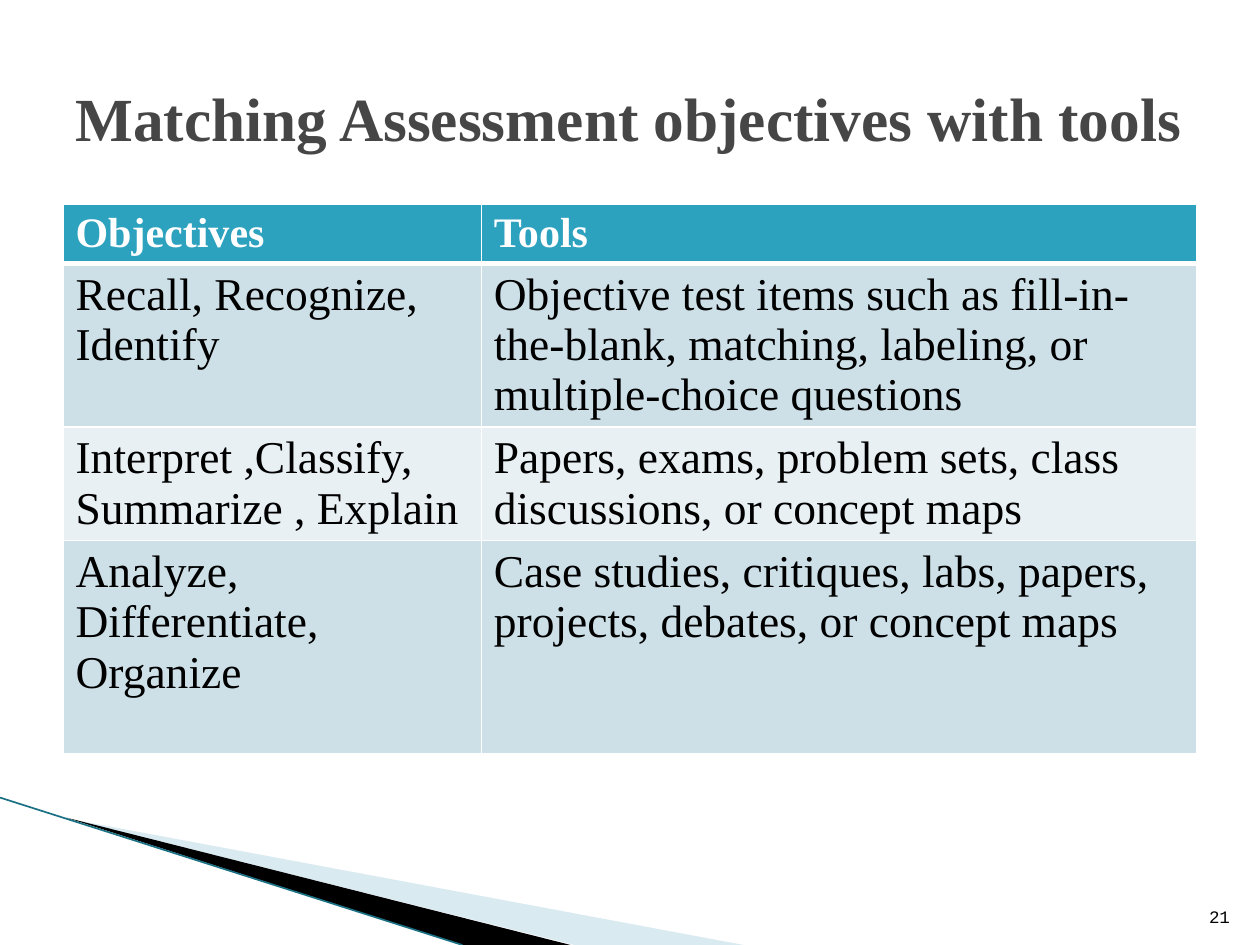
from lxml import etree
from pptx import Presentation
from pptx.dml.color import RGBColor
from pptx.enum.shapes import MSO_CONNECTOR
from pptx.enum.text import MSO_ANCHOR, PP_ALIGN
from pptx.oxml.ns import qn
from pptx.util import Inches, Pt

COLORS = {
    "title": "464646", "text": "000000", "white": "FFFFFF", "header": "2DA2BF",
    "band_dark": "CDE0E8", "band_light": "E8F0F4",
    "wedge_pale": "A0CBDC", "wedge_black": "000000", "edge": "1B7084",
}
SERIF = "Times New Roman"
TITLE = {"name": SERIF, "size": Pt(35), "bold": True}
HEADER = {"name": SERIF, "size": Pt(24), "bold": True}
BODY = {"name": SERIF, "size": Pt(26), "bold": False}
NUMBER = {"name": "Courier New", "size": Pt(10), "bold": False}

ROWS = [
    ("Objectives", "Tools"),
    ("Recall, Recognize, Identify",
     "Objective test items such as fill-in-the-blank, matching, labeling, "
     "or multiple-choice questions"),
    ("Interpret ,Classify, Summarize , Explain",
     "Papers, exams, problem sets, class discussions, or concept maps"),
    ("Analyze, Differentiate, Organize",
     "Case studies, critiques, labs, papers, projects, debates, or concept maps"),
]
COL_WIDTHS = [3.32, 5.68]
ROW_HEIGHTS = [0.46, 1.3, 0.9, 1.69]


def rgb(name):
    return RGBColor.from_string(COLORS[name])


def write(tf, text, font, color, align=PP_ALIGN.LEFT):
    p = tf.paragraphs[0]
    p.alignment = align
    r = p.add_run()
    r.text = text
    for key, value in font.items():
        setattr(r.font, key, value)
    r.font.color.rgb = rgb(color)


def add_text(s, box, text, font, color, anchor, align=PP_ALIGN.LEFT):
    tf = s.shapes.add_textbox(*map(Inches, box)).text_frame
    tf.word_wrap = True
    tf.vertical_anchor = anchor
    write(tf, text, font, color, align)


def set_borders(cell, widths):
    """Draw white borders; widths maps L, R, T, B to points."""
    tc_pr = cell._tc.get_or_add_tcPr()
    for i, side in enumerate("LRTB"):
        ln = etree.Element(qn(f"a:ln{side}"), w=str(Pt(widths.get(side, 1))))
        fill = etree.SubElement(ln, qn("a:solidFill"))
        etree.SubElement(fill, qn("a:srgbClr"), val=COLORS["white"])
        tc_pr.insert(i, ln)


def add_objectives_table(s, left, top):
    size = sum(COL_WIDTHS), sum(ROW_HEIGHTS)
    table = s.shapes.add_table(len(ROWS), len(COL_WIDTHS),
                               *map(Inches, (left, top, *size))).table
    for column, width in zip(table.columns, COL_WIDTHS):
        column.width = Inches(width)
    for i, (row, height, texts) in enumerate(zip(table.rows, ROW_HEIGHTS, ROWS)):
        row.height = Inches(height)
        band = "header" if i == 0 else ("band_light", "band_dark")[i % 2]
        font, color = (HEADER, "white") if i == 0 else (BODY, "text")
        for cell, text in zip(row.cells, texts):
            cell.fill.solid()
            cell.fill.fore_color.rgb = rgb(band)
            set_borders(cell, {0: {"B": 3}, 1: {"T": 3}}.get(i, {}))
            write(cell.text_frame, text, font, color)


def add_wedge(s, left, top, points, color, alpha=None):
    """Draw a filled outline whose points are relative to left, top."""
    corners = [(Inches(left + x), Inches(top + y)) for x, y in points]
    builder = s.shapes.build_freeform(*corners[0])
    builder.add_line_segments(corners[1:], close=True)
    sp = builder.convert_to_shape()
    sp.shadow.inherit = False
    sp.line.fill.background()
    sp.fill.solid()
    sp.fill.fore_color.rgb = rgb(color)
    if alpha:
        clr = sp._element.spPr.find(f".//{qn('a:srgbClr')}")
        etree.SubElement(clr, qn("a:alpha"), val=str(alpha * 1000))


def add_corner_decoration(s, left, top, width, height):
    add_wedge(s, left, top, [(0.55, 0.17), (width, height), (4.56, height)],
              "wedge_pale", alpha=40)
    add_wedge(s, left, top, [(0.53, 0.16), (4.53, height), (3.67, height)],
              "wedge_black")
    edge = s.shapes.add_connector(
        MSO_CONNECTOR.STRAIGHT, Inches(left), Inches(top),
        Inches(left + 3.67), Inches(top + height))
    edge.line.color.rgb = rgb("edge")
    edge.line.width = Pt(0.95)
    etree.SubElement(edge._element.spPr, qn("a:effectLst"))


def main():
    prs = Presentation()
    prs.slide_width, prs.slide_height = Inches(10), Inches(7.5)
    s = prs.slides.add_slide(prs.slide_layouts[6])
    add_corner_decoration(s, 0, 6.33, 5.9, 1.17)
    add_objectives_table(s, 0.5, 1.62)
    add_text(s, (0.5, 0.3, 9, 1.25), "Matching Assessment objectives with tools",
             TITLE, "title", MSO_ANCHOR.MIDDLE)
    add_text(s, (9.46, 7.01, 0.4, 0.4), "21", NUMBER, "text",
             MSO_ANCHOR.BOTTOM, PP_ALIGN.RIGHT)
    prs.save("out.pptx")


if __name__ == "__main__":
    main()
